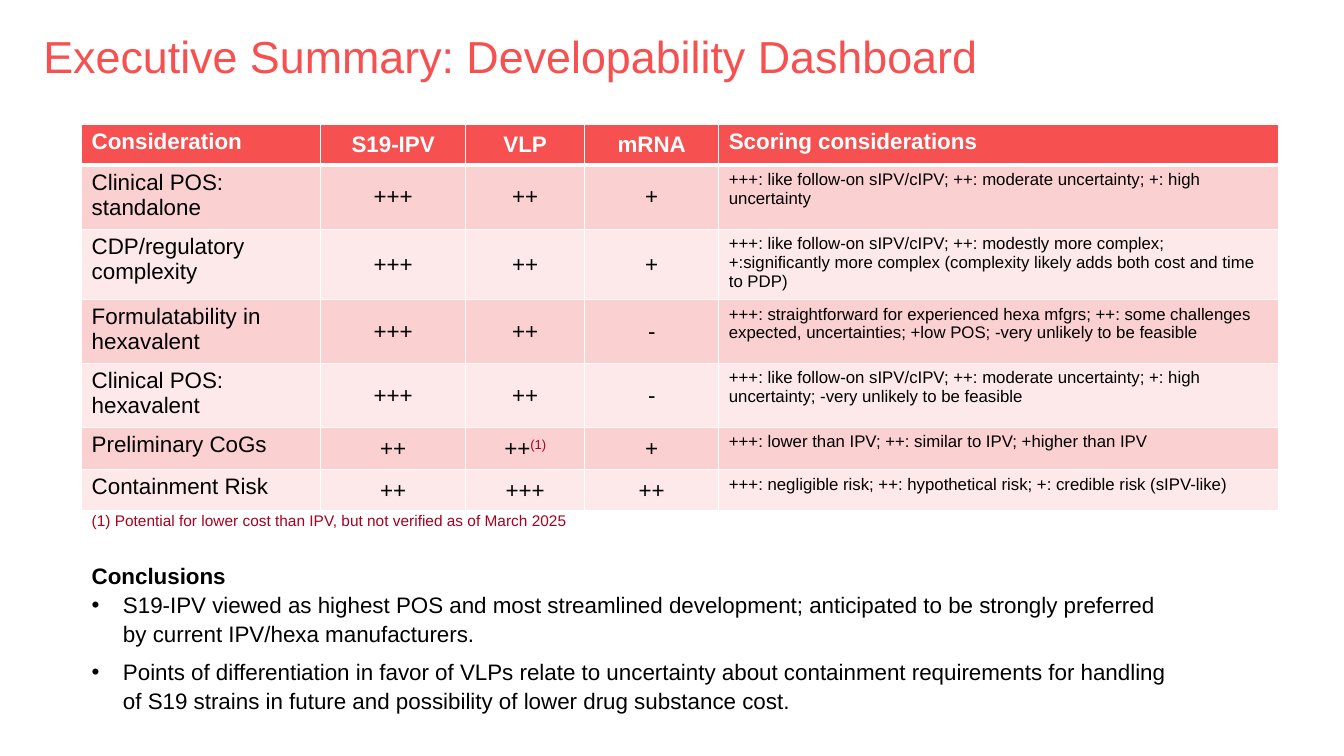
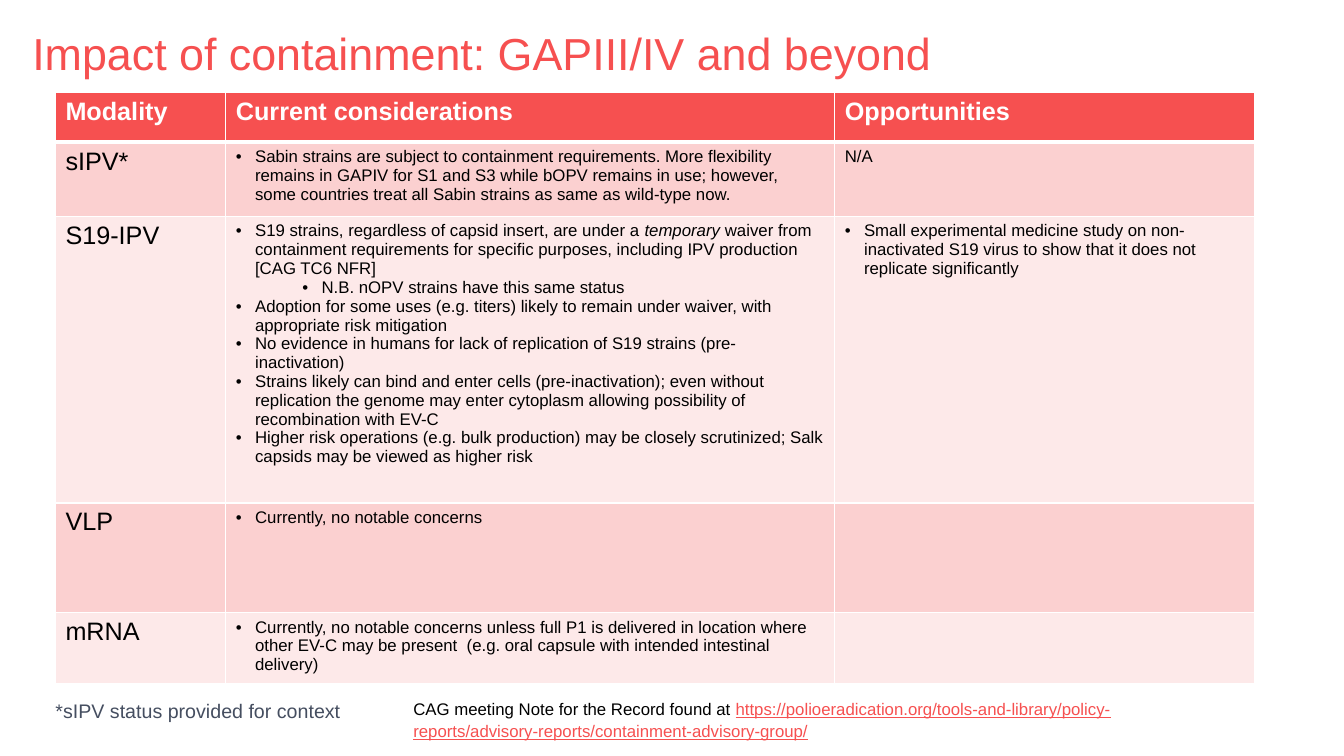
from dataclasses import dataclass

from lxml.etree import SubElement
from pptx import Presentation
from pptx.dml.color import RGBColor
from pptx.enum.text import MSO_ANCHOR, PP_ALIGN
from pptx.oxml.ns import qn
from pptx.util import Pt

# Shared look
PX = 9144  # EMU per px, 100 px to the inch
FONT = "Arial"
CORAL = RGBColor(0xF6, 0x50, 0x50)
ROSE = RGBColor(0xFB, 0xD0, 0xD0)
BLUSH = RGBColor(0xFD, 0xE9, 0xE9)
WINE = RGBColor(0xA8, 0x00, 0x1E)
SLATE = RGBColor(0x45, 0x4E, 0x60)
BLACK = RGBColor(0, 0, 0)
WHITE = RGBColor(255, 255, 255)
LEAD = 1.08  # line spacing of free text
THIN, THICK = 1, 3  # cell borders in points


@dataclass
class Run:
    text: str
    color: RGBColor = None
    bold: bool = False
    slant: bool = False
    line: bool = False
    sup: bool = False


@dataclass
class Para:
    runs: list
    left: int = 0
    hang: int = 0  # a hanging indent brings a bullet
    after: int = 0


def plain(text):
    return Para([Run(text)])


def item(*parts, left=19, hang=19, after=0):
    runs = [Run(part) if isinstance(part, str) else part for part in parts]
    return Para(runs, left, hang, after)


def write(frame, paras, size, color, bold=False, align=PP_ALIGN.LEFT, lead=1):
    for i, para in enumerate(paras):
        p = frame.paragraphs[0] if i == 0 else frame.add_paragraph()
        if para.hang:
            props = p._p.get_or_add_pPr()
            props.set("marL", str(para.left * PX))
            props.set("indent", str(-para.hang * PX))
            SubElement(props, qn("a:buFont")).set("typeface", FONT)
            SubElement(props, qn("a:buChar")).set("char", "•")
        p.alignment = align
        p.line_spacing = lead
        p.space_after = Pt(para.after)
        for run in para.runs:
            r = p.add_run()
            r.text = run.text
            font = r.font
            font.name, font.size = FONT, Pt(size)
            font.bold, font.italic = bold or run.bold, run.slant
            font.underline = run.line
            font.color.rgb = run.color or color
            if run.sup:
                r._r.get_or_add_rPr().set("baseline", "30000")


def add_text(slide, box, paras, size, color):
    frame = slide.shapes.add_textbox(*(n * PX for n in box)).text_frame
    frame.margin_left = frame.margin_right = 0
    frame.margin_top = frame.margin_bottom = 0
    frame.word_wrap = True
    write(frame, paras, size, color, lead=LEAD)


def add_title(slide, box, text):
    add_text(slide, box, [plain(text)], 32, CORAL)


def edge(cell, row):
    """White borders, thick between the head and the body."""
    props = cell._tc.get_or_add_tcPr()
    widths = {"L": THIN, "R": THIN,
              "T": THICK if row == 1 else THIN,
              "B": THICK if row == 0 else THIN}
    for side, width in widths.items():
        line = SubElement(props, qn("a:ln" + side))
        line.set("w", str(Pt(width)))
        fill = SubElement(line, qn("a:solidFill"))
        SubElement(fill, qn("a:srgbClr")).set("val", str(WHITE))


def add_grid(slide, left, top, cols, rows, data, sizes, marks=()):
    """Table with a coral head; the columns in marks are centred."""
    table = slide.shapes.add_table(
        len(rows), len(cols), left * PX, top * PX,
        sum(cols) * PX, sum(rows) * PX).table
    for col, width in zip(table.columns, cols):
        col.width = width * PX
    for y, (height, line) in enumerate(zip(rows, data)):
        table.rows[y].height = height * PX
        head = y == 0
        for x, value in enumerate(line):
            cell = table.cell(y, x)
            edge(cell, y)
            cell.fill.solid()
            cell.fill.fore_color.rgb = CORAL if head else (BLUSH, ROSE)[y % 2]
            if x in marks:
                cell.vertical_anchor = MSO_ANCHOR.MIDDLE
            if not value:
                continue
            paras = [plain(value)] if isinstance(value, str) else value
            write(cell.text_frame, paras, sizes[0] if head else sizes[x],
                  WHITE if head else BLACK, head,
                  PP_ALIGN.CENTER if x in marks else PP_ALIGN.LEFT)


# Slide 1: scores
SCORES = [
    ("Consideration", "S19-IPV", "VLP", "mRNA", "Scoring considerations"),
    ("Clinical POS: standalone", "+++", "++", "+",
     "+++: like follow-on sIPV/cIPV; ++: moderate uncertainty; "
     "+: high uncertainty"),
    ("CDP/regulatory complexity", "+++", "++", "+",
     "+++: like follow-on sIPV/cIPV; ++: modestly more complex; "
     "+:significantly more complex (complexity likely adds both cost "
     "and time to PDP)"),
    ("Formulatability in hexavalent", "+++", "++", "-",
     "+++: straightforward for experienced hexa mfgrs; ++: some challenges "
     "expected, uncertainties; +low POS; -very unlikely to be feasible"),
    ("Clinical POS: hexavalent", "+++", "++", "-",
     "+++: like follow-on sIPV/cIPV; ++: moderate uncertainty; "
     "+: high uncertainty; -very unlikely to be feasible"),
    ("Preliminary CoGs", "++",
     [Para([Run("++"), Run("(1)", WINE, sup=True)])], "+",
     "+++: lower than IPV; ++: similar to IPV; +higher than IPV"),
    ("Containment Risk", "++", "+++", "++",
     "+++: negligible risk; ++: hypothetical risk; "
     "+: credible risk (sIPV-like)"),
]
CLOSING = [
    Para([Run("Conclusions", bold=True)]),
    item("S19-IPV viewed as highest POS and most streamlined development; "
         "anticipated to be strongly preferred by current IPV/hexa "
         "manufacturers.", left=31, hang=31, after=6),
    item("Points of differentiation in favor of VLPs relate to uncertainty "
         "about containment requirements for handling of S19 strains in "
         "future and possibility of lower drug substance cost.",
         left=31, hang=31, after=6),
]

# Slide 2: containment
IMPACT = [
    ("Modality", "Current considerations", "Opportunities"),
    ("sIPV*",
     [item("Sabin strains are subject to containment requirements. More "
           "flexibility remains in GAPIV for S1 and S3 while bOPV remains in "
           "use; however, some countries treat all Sabin strains as same as "
           "wild-type now.")],
     "N/A"),
    ("S19-IPV",
     [item("S19 strains, regardless of capsid insert, are under a ",
           Run("temporary", slant=True),
           " waiver from containment requirements for specific purposes, "
           "including IPV production [CAG TC6 NFR]"),
      item("N.B. nOPV strains have this same status", left=85),
      item("Adoption for some uses (e.g. titers) likely to remain under "
           "waiver, with appropriate risk mitigation"),
      item("No evidence in humans for lack of replication of S19 strains "
           "(pre-inactivation)"),
      item("Strains likely can bind and enter cells (pre-inactivation); even "
           "without replication the genome may enter cytoplasm allowing "
           "possibility of recombination with EV-C"),
      item("Higher risk operations (e.g. bulk production) may be closely "
           "scrutinized; Salk capsids may be viewed as higher risk")],
     [item("Small experimental medicine study on non-inactivated S19 virus "
           "to show that it does not replicate significantly")]),
    ("VLP", [item("Currently, no notable concerns")], None),
    ("mRNA",
     [item("Currently, no notable concerns unless full P1 is delivered in "
           "location where other EV-C may be present  (e.g. oral capsule "
           "with intended intestinal delivery)")],
     None),
]
SOURCE = Para([
    Run("CAG meeting Note for the Record found at "),
    Run("https://polioeradication.org/tools-and-library/policy-reports/"
        "advisory-reports/containment-advisory-group/", CORAL, line=True),
])


def score_slide(slide):
    add_title(slide, (43, 24, 1172, 69),
              "Executive Summary: Developability Dashboard")
    add_grid(slide, 81, 123, (237, 144, 118, 133, 555),
             (41, 59, 65, 59, 59, 42, 41), SCORES,
             (16, 16, 16, 16, 12), marks=(1, 2, 3))
    add_text(slide, (91, 506, 760, 30), [plain(
        "(1) Potential for lower cost than IPV, but not verified as of "
        "March 2025")], 11, WINE)
    add_text(slide, (91, 556, 1075, 178), CLOSING, 16, BLACK)


def impact_slide(slide):
    add_title(slide, (32, 21, 1172, 59),
              "Impact of containment: GAPIII/IV and beyond")
    add_grid(slide, 55, 92, (169, 604, 416), (49, 74, 284, 109, 68),
             IMPACT, (18, 12, 12))
    add_text(slide, (55, 692, 299, 24),
             [plain("*sIPV status provided for context")], 14, SLATE)
    add_text(slide, (410, 692, 744, 40), [SOURCE], 12, BLACK)


def main():
    deck = Presentation()
    deck.slide_width, deck.slide_height = 1333 * PX, 750 * PX
    for build in (score_slide, impact_slide):
        build(deck.slides.add_slide(deck.slide_layouts[6]))
    deck.save("out.pptx")


if __name__ == "__main__":
    main()
